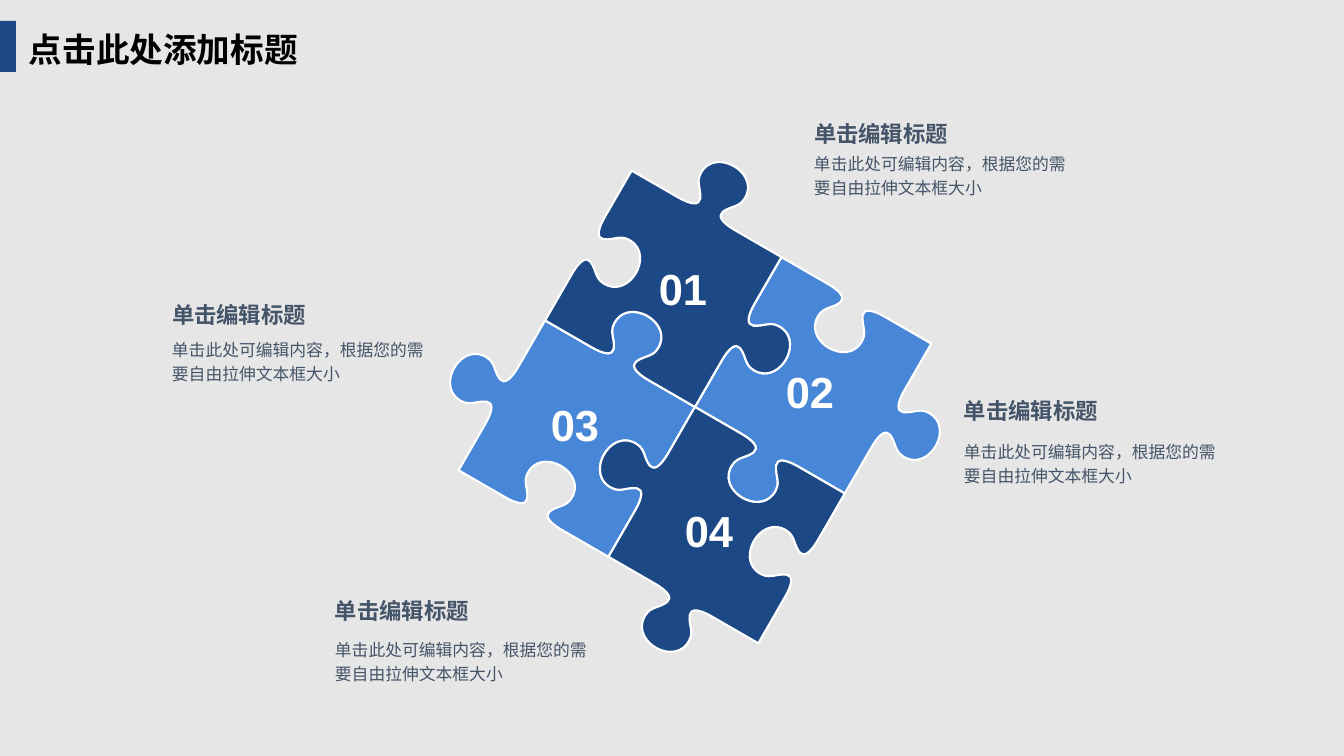
from math import cos, radians, sin

from lxml import etree
from pptx import Presentation
from pptx.dml.color import RGBColor
from pptx.enum.shapes import MSO_SHAPE
from pptx.enum.text import MSO_ANCHOR, PP_ALIGN
from pptx.oxml.ns import qn
from pptx.util import Pt

PX = 9071  # EMU in one px, at 100.8 px to the inch
RECT = MSO_SHAPE.RECTANGLE
TOP, BOTTOM = MSO_ANCHOR.TOP, MSO_ANCHOR.BOTTOM
LEFT, CENTER = PP_ALIGN.LEFT, PP_ALIGN.CENTER

GREY = RGBColor(0xE7, 0xE6, 0xE6)
NAVY = RGBColor(0x1C, 0x48, 0x85)
BLUE = RGBColor(0x48, 0x86, 0xD8)
SLATE = RGBColor(0x44, 0x54, 0x69)
WHITE = RGBColor(0xFF, 0xFF, 0xFF)
BLACK = RGBColor(0, 0, 0)

SIDE = 173
TILT = 30
MID_X, MID_Y = 695, 407

# One edge, as (way along from its middle, height): a line, five curves, a line
HALF = [(-34, 0), (-16, 0), (-11, 4), (-13, 10),
        (-18, 21), (-27, 22), (-25, 37), (-21, 61)]
EDGE = HALF + [(-s, h) for s, h in reversed(HALF)] + [(SIDE / 2, 0)]

prs = Presentation()
prs.slide_width, prs.slide_height = 1344 * PX, 756 * PX
slide = prs.slides.add_slide(prs.slide_layouts[6])
slide.background.fill.solid()
slide.background.fill.fore_color.rgb = GREY


def add_text(text, x, y, w, h, size, color, bold=True, font="Arial",
             pad=0, align=LEFT, anchor=TOP, wrap=True, space=1.0):
    box = slide.shapes.add_textbox(x * PX, y * PX, w * PX, h * PX)
    frame = box.text_frame
    frame.word_wrap = wrap
    frame.vertical_anchor = anchor
    frame.margin_left = frame.margin_right = 2 * pad * PX
    frame.margin_top = frame.margin_bottom = pad * PX
    para = frame.paragraphs[0]
    para.text = text
    para.alignment = align
    para.line_spacing = space
    para.font.name = font
    para.font.size = Pt(size)
    para.font.bold = bold
    para.font.color.rgb = color


def add_piece(col, row, color):
    """Draw a piece upright, then turn it about the middle of the puzzle."""
    x, y = (col - 1) * SIDE, (row - 1) * SIDE
    mid = SIDE / 2
    side = 1 if row == 0 else -1  # way the tabs of this row point
    rise = -1 if col == 0 else 1  # way the tabs of this column point
    points = [(x + mid + s, y + rise * h) for s, h in EDGE]
    points += [(x + SIDE + side * h, y + mid + s) for s, h in EDGE]
    points += [(x + mid - s, y + SIDE + rise * h) for s, h in EDGE]
    points += [(x + side * h, y + mid - s) for s, h in EDGE]

    build = slide.shapes.build_freeform(x * PX, y * PX)
    build.add_line_segments([(a * PX, b * PX) for a, b in points])
    piece = build.convert_to_shape()

    # Gather each three inner points of an edge into one Bezier curve
    lines = list(piece._element.iter(qn("a:lnTo")))
    for start in range(0, len(points), len(EDGE)):
        for i in range(start + 1, start + len(EDGE) - 1, 3):
            curve = etree.Element(qn("a:cubicBezTo"))
            lines[i].addprevious(curve)
            for line in lines[i:i + 3]:
                curve.append(line[0])
                line.getparent().remove(line)

    cx, cy = piece.left + piece.width / 2, piece.top + piece.height / 2
    c, s = cos(radians(TILT)), sin(radians(TILT))
    piece.left = round(MID_X * PX + cx * c - cy * s - piece.width / 2)
    piece.top = round(MID_Y * PX + cx * s + cy * c - piece.height / 2)
    piece.rotation = TILT
    piece.shadow.inherit = False
    piece.fill.solid()
    piece.fill.fore_color.rgb = color
    piece.line.color.rgb = WHITE
    piece.line.width = Pt(1.5)


add_text("点击此处添加标题", 19, 24, 291, 51, 24, BLACK,
         font="Noto Sans CJK SC", pad=5)
bar = slide.shapes.add_shape(RECT, 0, 21 * PX, 16 * PX, 51 * PX)
bar.shadow.inherit = False
bar.fill.solid()
bar.fill.fore_color.rgb = NAVY
bar.line.fill.background()

for col, row, color in [(0, 1, BLUE), (1, 0, BLUE), (0, 0, NAVY), (1, 1, NAVY)]:
    add_piece(col, row, color)

# Number, its place, then the place of the heading and the top of the body
ITEMS = [
    ("01", 658, 260, 814, 120, 150),
    ("02", 785, 363, 964, 397, 438),
    ("03", 550, 396, 172, 301, 336),
    ("04", 684, 502, 335, 597, 636),
]
for num, nx, ny, x, head, body in ITEMS:
    add_text(num, nx, ny, 50, 54, 31, WHITE, align=CENTER, anchor=BOTTOM,
             wrap=False)
    add_text("单击编辑标题", x, head, 216, 27, 16, SLATE)
    add_text("单击此处可编辑内容，根据您的需要自由拉伸文本框大小",
             x, body, 257, 46, 12, SLATE, bold=False, space=1.2)

prs.save("out.pptx")
